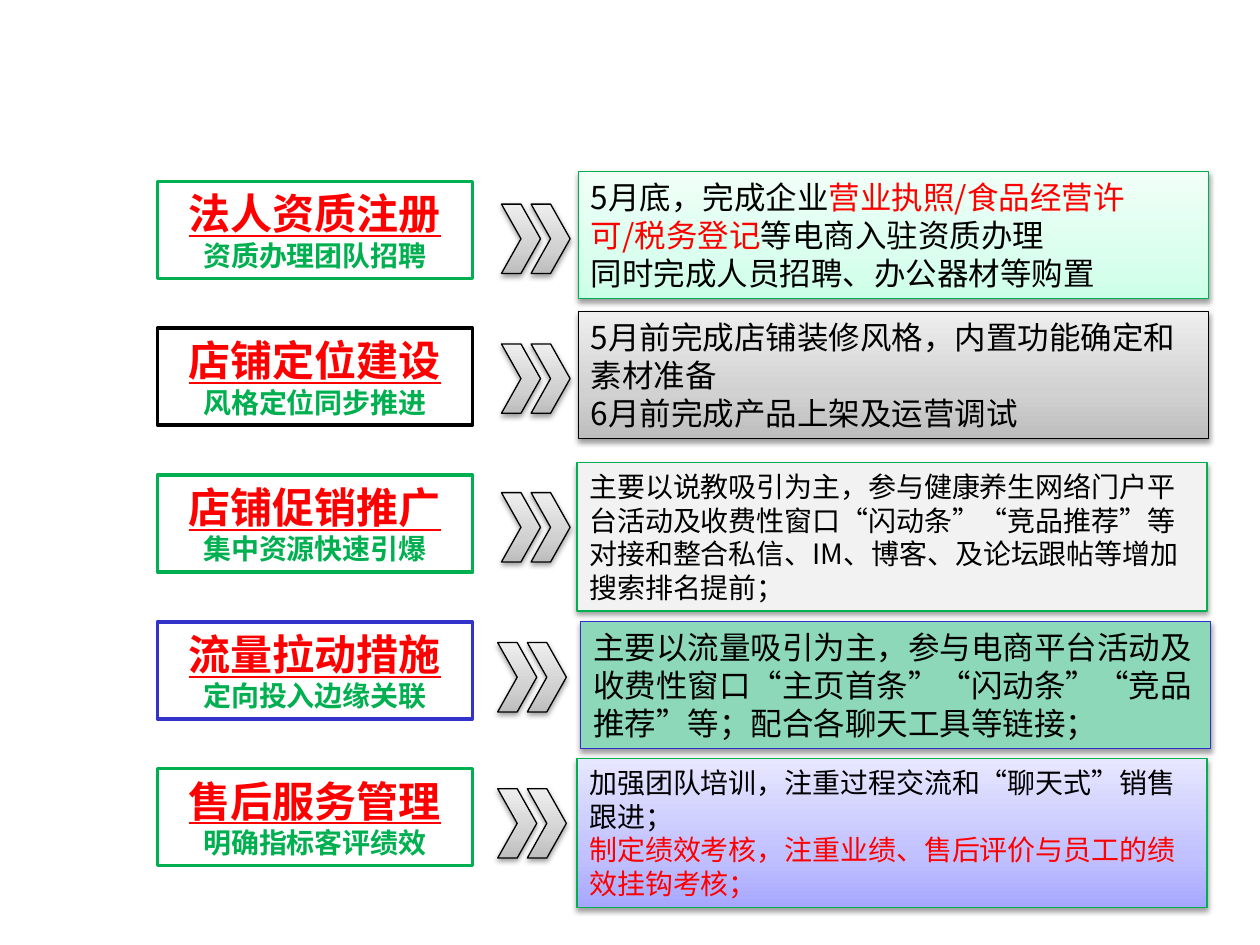
from dataclasses import dataclass

from pptx import Presentation, util as u
from pptx.dml import color
from pptx.enum import shapes, text
from pptx.oxml import parse_xml
from pptx.oxml.ns import nsdecls, qn


@dataclass(frozen=True)
class Theme:
    face: str = "Noto Sans CJK SC"
    white: str = "FFFFFF"
    black: str = "000000"
    red: str = "FF0000"
    green: str = "00B050"
    blue: str = "3333CC"
    navy: str = "2E2ECB"
    pale: str = "F2F2F2"
    teal: str = "8CD8B8"
    # Gradients run from the bottom to the top
    mint: tuple = ("CCFFE8", "DAFFEE", "F1FFF8")
    gray: tuple = ("BDBDBD", "D1D1D1", "EEEEEE")
    lilac: tuple = ("A7A7FF", "C1C1FF", "E7E7FF")
    head: int = 24
    large: int = 18
    small: int = 16
    thick: float = 2
    thin: float = 0.75


T = Theme()
COLS, ROWS = 100, 75


class Deck:
    def __init__(self, wide, high):
        self.prs = Presentation()
        self.prs.slide_width = u.Inches(wide)
        self.prs.slide_height = u.Inches(high)
        self.slide = self.prs.slides.add_slide(self.prs.slide_layouts[6])

    def area(self, col, row, wide, high):
        """Turn grid columns and rows into lengths on the slide."""
        x, y = self.prs.slide_width / COLS, self.prs.slide_height / ROWS
        return [round(n) for n in (col * x, row * y, wide * x, high * y)]

    def paint(self, shape, fill):
        if isinstance(fill, str):
            shape.fill.solid()
            shape.fill.fore_color.rgb = color.RGBColor.from_string(fill)
            return
        shape.fill.gradient()
        stops = "".join(
            f'<a:gs pos="{pos}"><a:srgbClr val="{hue}"/></a:gs>'
            for pos, hue in zip((0, 35000, 100000), fill))
        props = shape._element.spPr
        props.replace(props.find(qn("a:gradFill")), parse_xml(
            f'<a:gradFill {nsdecls("a")} rotWithShape="1"><a:gsLst>{stops}'
            '</a:gsLst><a:lin ang="16200000" scaled="0"/></a:gradFill>'))

    def shade(self, shape):
        shape._element.spPr.find(qn("a:effectLst")).append(parse_xml(
            f'<a:outerShdw {nsdecls("a")} blurRad="40000" dist="20000" '
            'dir="5400000" rotWithShape="0"><a:srgbClr val="000000">'
            '<a:alpha val="38000"/></a:srgbClr></a:outerShdw>'))

    def shape(self, kind, area, fill, edge, width, shade=True, home=None):
        home = home or self.slide.shapes
        item = home.add_shape(kind, *self.area(*area))
        self.paint(item, fill)
        item.line.color.rgb = color.RGBColor.from_string(edge)
        item.line.width = u.Pt(width)
        item.shadow.inherit = False
        if shade:
            self.shade(item)
        return item

    def words(self, shape, paras, align):
        """Fill a shape with paragraphs, each a list of (words, format)."""
        frame = shape.text_frame
        frame.word_wrap = True
        frame.auto_size = text.MSO_AUTO_SIZE.SHAPE_TO_FIT_TEXT
        for i, runs in enumerate(paras):
            para = frame.add_paragraph() if i else frame.paragraphs[0]
            para.alignment = align
            for words, form in runs:
                run = para.add_run()
                run.text = words
                self.style(run.font, **form)

    def style(self, font, hue, size, **form):
        form = {"name": T.face, "size": u.Pt(size), **form}
        for key, value in form.items():
            setattr(font, key, value)
        font.color.rgb = color.RGBColor.from_string(hue)
        font._element.append(parse_xml(
            f'<a:ea {nsdecls("a")} typeface="{T.face}"/>'))

    def label(self, row, edge, head, note):
        box = self.shape(shapes.MSO_SHAPE.RECTANGLE, (12.5, row, 25, 7.7),
                         T.white, edge, T.thick, shade=False)
        top = {"hue": T.red, "size": T.head, "bold": True, "underline": True}
        low = {"hue": T.green, "size": T.small, "bold": True}
        self.words(box, [[(head, top)], [(note, low)]], text.PP_ALIGN.CENTER)

    def arrows(self, col, row):
        group = self.slide.shapes.add_group_shape()
        for step in (0, 2.35):
            self.shape(shapes.MSO_SHAPE.CHEVRON, (col + step, row, 3.1, 5.5),
                       T.gray, T.black, T.thin, home=group.shapes)

    def panel(self, col, row, high, fill, edge, size, paras):
        box = self.shape(shapes.MSO_SHAPE.RECTANGLE, (col, row, 50, high),
                         fill, edge, T.thin)
        self.words(box, [[(words, {"hue": hue, "size": size})
                          for words, hue in runs] for runs in paras],
                   text.PP_ALIGN.LEFT)


# One entry per step: label, arrows (col, row), panel
STEPS = [
    ((T.green, "法人资质注册", "资质办理团队招聘"), (39.8, 16.2),
     (45.9, 13.6, 10.1, T.mint, T.green, T.large, [
         [("5月底，完成企业", T.black),
          ("营业执照/食品经营许可/税务登记", T.red),
          ("等电商入驻资质办理", T.black)],
         [("同时完成人员招聘、办公器材等购置", T.black)]])),
    ((T.black, "店铺定位建设", "风格定位同步推进"), (39.8, 27.3),
     (45.9, 24.7, 10.1, T.gray, T.black, T.large, [
         [("5月前完成店铺装修风格，内置功能确定和素材准备", T.black)],
         [("6月前完成产品上架及运营调试", T.black)]])),
    ((T.green, "店铺促销推广", "集中资源快速引爆"), (39.8, 39.1),
     (45.8, 36.7, 11.8, T.pale, T.green, T.small, [
         [("主要以说教吸引为主，参与健康养生网络门户平台活动及收费性窗口"
           "“闪动条”“竞品推荐”等", T.black)],
         [("对接和整合私信、IM、博客、及论坛跟帖等增加搜索排名提前；",
           T.black)]])),
    ((T.blue, "流量拉动措施", "定向投入边缘关联"), (39.5, 51),
     (46.1, 49.3, 10.1, T.teal, T.navy, T.large, [
         [("主要以流量吸引为主，参与电商平台活动及收费性窗口"
           "“主页首条”“闪动条”“竞品推荐”等；配合各聊天工具等链接；",
           T.black)]])),
    ((T.green, "售后服务管理", "明确指标客评绩效"), (39.5, 62.6),
     (45.8, 60.2, 11.8, T.lilac, T.green, T.small, [
         [("加强团队培训，注重过程交流和“聊天式”销售跟进；", T.black)],
         [("制定绩效考核，注重业绩、售后评价与员工的绩效挂钩考核；",
           T.red)]])),
]


def main():
    deck = Deck(10, 7.5)
    for i, (label, arrows, panel) in enumerate(STEPS):
        deck.label(14.4 + 11.65 * i, *label)
        deck.arrows(*arrows)
        deck.panel(*panel)
    deck.prs.save("out.pptx")


if __name__ == "__main__":
    main()
